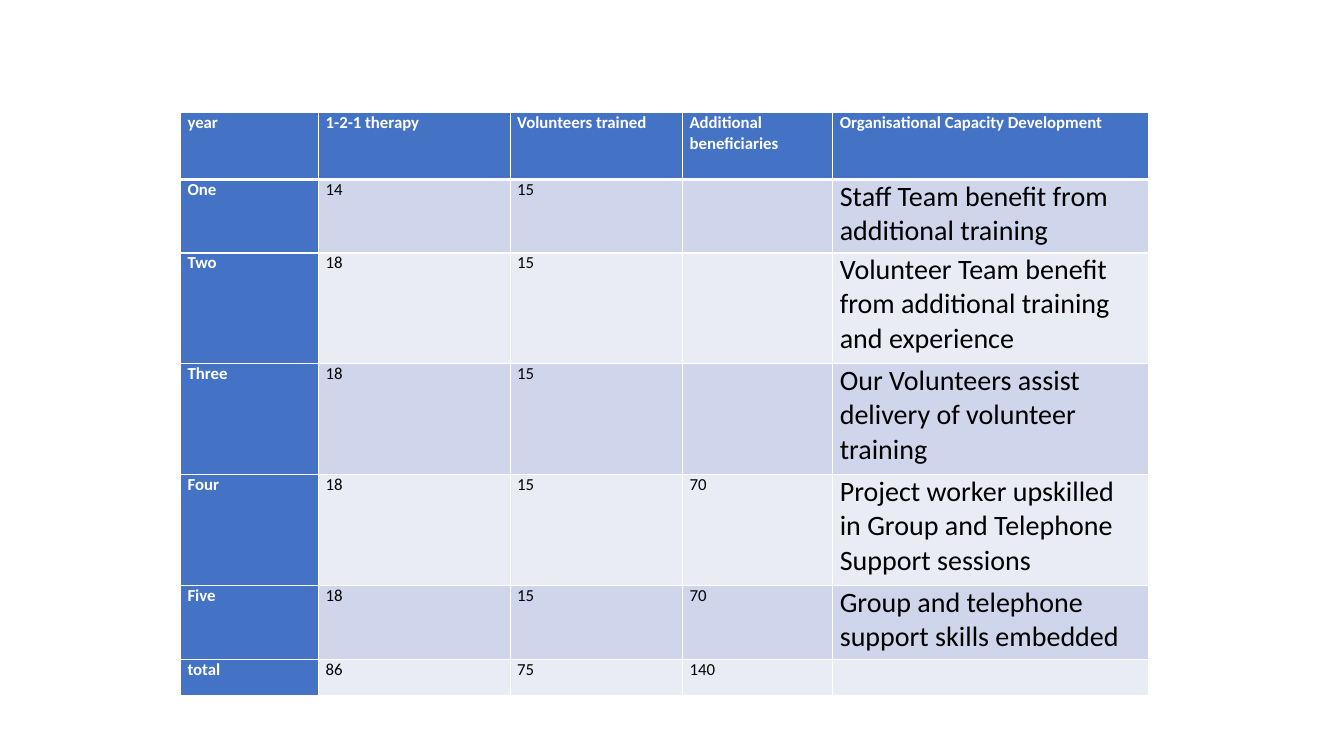
from dataclasses import dataclass

from lxml.etree import SubElement
from pptx import Presentation
from pptx.dml.color import RGBColor
from pptx.oxml.ns import qn
from pptx.util import Inches, Pt


@dataclass(frozen=True)
class Theme:
    font: str = "Calibri"
    heading_fill: str = "4472C4"
    band_fills: tuple = ("CFD5EA", "E9EBF5")
    heading_text: str = "FFFFFF"
    body_text: str = "000000"
    border: str = "FFFFFF"
    small: int = 12
    large: int = 20
    thin_line: int = 1
    thick_line: int = 3


THEME = Theme()
COLUMN_WIDTHS = (1.37, 1.9, 1.71, 1.49, 3.13)
ROW_HEIGHTS = (0.66, 0.73, 1.1, 1.1, 1.1, 0.73, 0.36)
YEARLY_PLAN = (
    ("year", "1-2-1 therapy", "Volunteers trained", "Additional beneficiaries",
     "Organisational Capacity Development"),
    ("One", "14", "15", "", "Staff Team benefit from additional training"),
    ("Two", "18", "15", "",
     "Volunteer Team benefit from additional training and experience"),
    ("Three", "18", "15", "",
     "Our Volunteers assist delivery of volunteer training"),
    ("Four", "18", "15", "70",
     "Project worker upskilled in Group and Telephone Support sessions"),
    ("Five", "18", "15", "70", "Group and telephone support skills embedded"),
    ("total", "86", "75", "140", ""),
)


def set_borders(cell, row):
    """Draw thin borders, with a thick rule between the header and row one."""
    thick_edge = {0: "lnB", 1: "lnT"}.get(row)
    properties = cell._tc.get_or_add_tcPr()
    for edge in ("lnL", "lnR", "lnT", "lnB"):
        width = THEME.thick_line if edge == thick_edge else THEME.thin_line
        line = SubElement(properties, qn(f"a:{edge}"), w=str(Pt(width)))
        fill = SubElement(line, qn("a:solidFill"))
        SubElement(fill, qn("a:srgbClr"), val=THEME.border)


def fill_cell(cell, text, row, column):
    is_heading = row == 0 or column == 0
    is_capacity = row > 0 and column == len(COLUMN_WIDTHS) - 1 and text
    cell.margin_left = cell.margin_right = Inches(0.07)
    cell.margin_top = cell.margin_bottom = 0

    set_borders(cell, row)
    cell.fill.solid()
    band = THEME.band_fills[(row - 1) % 2]
    cell.fill.fore_color.rgb = RGBColor.from_string(
        THEME.heading_fill if is_heading else band)

    cell.text = text
    font = cell.text_frame.paragraphs[0].font
    font.name = THEME.font
    font.size = Pt(THEME.large if is_capacity else THEME.small)
    font.bold = is_heading
    font.color.rgb = RGBColor.from_string(
        THEME.heading_text if is_heading else THEME.body_text)


def add_plan_table(slide):
    table = slide.shapes.add_table(
        len(ROW_HEIGHTS), len(COLUMN_WIDTHS), Inches(1.79), Inches(1.12),
        Inches(sum(COLUMN_WIDTHS)), Inches(sum(ROW_HEIGHTS))).table
    table.first_col = True
    for column, width in zip(table.columns, COLUMN_WIDTHS):
        column.width = Inches(width)
    for row, height in zip(table.rows, ROW_HEIGHTS):
        row.height = Inches(height)
    for row, texts in enumerate(YEARLY_PLAN):
        for column, text in enumerate(texts):
            fill_cell(table.cell(row, column), text, row, column)


def main():
    presentation = Presentation()
    presentation.slide_width = Inches(13.33)
    presentation.slide_height = Inches(7.5)
    slide = presentation.slides.add_slide(presentation.slide_layouts[6])
    add_plan_table(slide)
    presentation.save("out.pptx")


if __name__ == "__main__":
    main()
